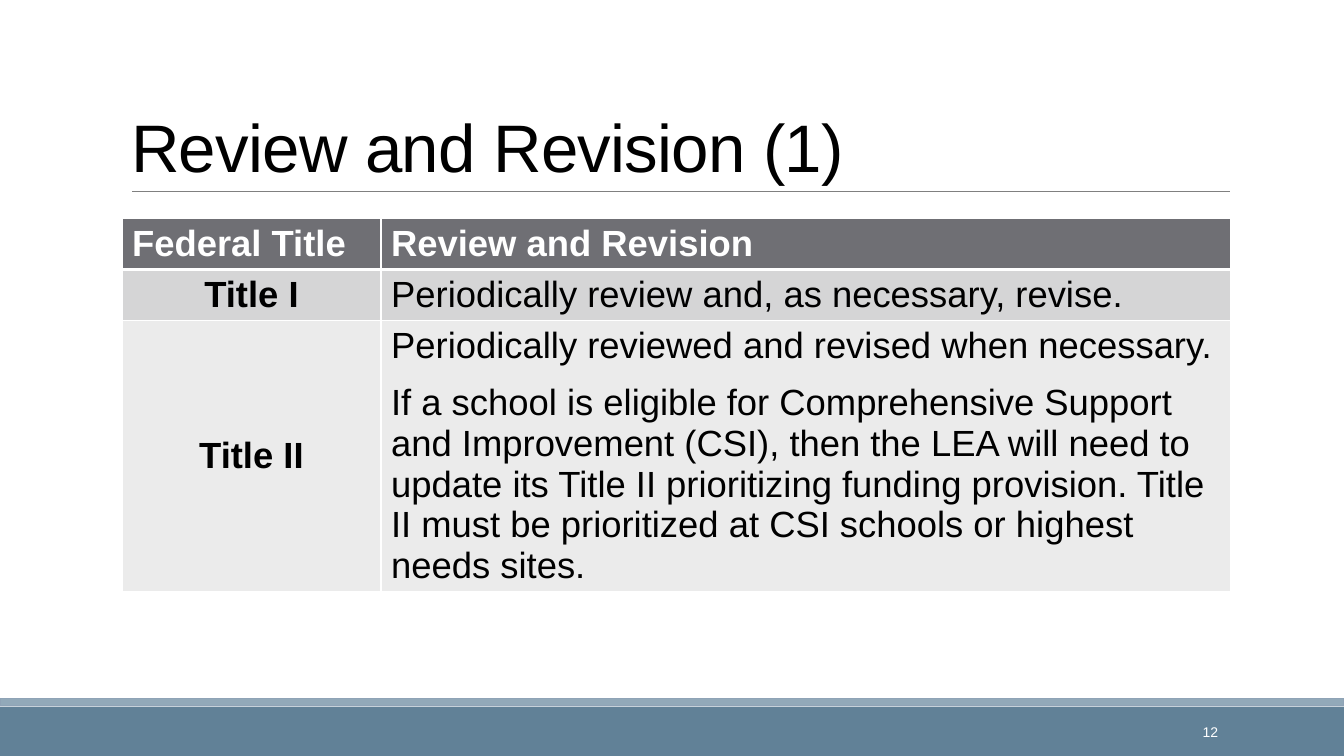
"""Build the Review and Revision slide with its table of federal titles."""
import pptx
import pptx.dml.color
import pptx.enum.shapes
import pptx.enum.text
import pptx.oxml
import pptx.oxml.ns
import pptx.util
from pptx.util import Inches, Pt

TITLE = "Review and Revision (1)"
PAGE_NUMBER = "12"
ROWS = [
    ("Federal Title", ["Review and Revision"]),
    ("Title I", ["Periodically review and, as necessary, revise."]),
    ("Title II", [
        "Periodically reviewed and revised when necessary.",
        "If a school is eligible for Comprehensive Support and Improvement (CSI), "
        "then the LEA will need to update its Title II prioritizing funding provision. "
        "Title II must be prioritized at CSI schools or highest needs sites.",
    ]),
]
COLUMN_WIDTHS = [2.57, 8.43]
ROW_HEIGHTS = [0.5, 0.5, 2.68]
ROW_FILLS = ["header", "band_dark", "band_light"]
COLORS = {
    "white": "FFFFFF", "black": "000000", "header": "6F6F74",
    "band_dark": "D5D5D6", "band_light": "EBEBEB", "footer": "618197",
    "stripe": "92A9B9", "stripe_edge": "8FA3B6", "rule": "808080",
}
FONT = "Arial"
ALIGN = pptx.enum.text.PP_ALIGN
ANCHOR = pptx.enum.text.MSO_ANCHOR


def color(name):
    return pptx.dml.color.RGBColor.from_string(COLORS[name])


def style_runs(para, size, color_name, bold=False):
    for span in para.runs:
        span.font.name = FONT
        span.font.size = Pt(size)
        span.font.bold = bold
        span.font.color.rgb = color(color_name)


def add_bar(page, top, height, fill, edge=None):
    bar = page.shapes.add_shape(pptx.enum.shapes.MSO_SHAPE.RECTANGLE,
                                0, Inches(top), Inches(13.33), Inches(height))
    bar.shadow.inherit = False
    bar.fill.solid()
    bar.fill.fore_color.rgb = color(fill)
    if edge:
        bar.line.color.rgb = color(edge)
        bar.line.width = Pt(1.25)
    else:
        bar.line.fill.background()


def add_rule(page):
    rule = page.shapes.add_connector(pptx.enum.shapes.MSO_CONNECTOR.STRAIGHT,
                                     Inches(1.31), Inches(1.9), Inches(12.2), Inches(1.9))
    rule.line.color.rgb = color("rule")
    rule.line.width = Pt(0.5)
    properties = rule._element.spPr
    properties.append(properties.makeelement(pptx.oxml.ns.qn("a:effectLst"), {}))


def add_title(page):
    title = page.shapes.title
    title.left, title.top = Inches(1.2), Inches(0.31)
    title.width, title.height = Inches(11), Inches(1.59)
    frame = title.text_frame
    frame.text = TITLE
    frame.word_wrap = True
    frame.vertical_anchor = ANCHOR.BOTTOM
    para = frame.paragraphs[0]
    para.alignment = ALIGN.LEFT
    para.line_spacing = 0.85
    style_runs(para, 48, "black")
    para.runs[0].font._element.set("spc", "-50")


def add_borders(cell, row):
    widths = {"L": 1, "R": 1, "T": 3 if row == 1 else 1, "B": 3 if row == 0 else 1}
    for side, width in widths.items():
        cell._tc.get_or_add_tcPr().append(pptx.oxml.parse_xml(
            f'<a:ln{side} {pptx.oxml.ns.nsdecls("a")} w="{Pt(width)}"><a:solidFill>'
            f'<a:srgbClr val="{COLORS["white"]}"/></a:solidFill></a:ln{side}>'))


def fill_cell(cell, lines, row, column):
    add_borders(cell, row)
    cell.fill.solid()
    cell.fill.fore_color.rgb = color(ROW_FILLS[row])
    cell.vertical_anchor = ANCHOR.MIDDLE if column == 0 else ANCHOR.TOP
    cell.text_frame.text = "\n".join(lines)
    for para in cell.text_frame.paragraphs:
        para.alignment = ALIGN.CENTER if column == 0 and row > 0 else ALIGN.LEFT
        para.space_after = Pt(12)
        style_runs(para, 26, "black" if row else "white", row == 0 or column == 0)


def add_review_table(page):
    table = page.shapes.add_table(
        len(ROWS), len(COLUMN_WIDTHS), Inches(1.21), Inches(2.17),
        Inches(sum(COLUMN_WIDTHS)), Inches(sum(ROW_HEIGHTS))).table
    for column, width in enumerate(COLUMN_WIDTHS):
        table.columns[column].width = Inches(width)
    for row, (name, lines) in enumerate(ROWS):
        table.rows[row].height = Inches(ROW_HEIGHTS[row])
        fill_cell(table.cell(row, 0), [name], row, 0)
        fill_cell(table.cell(row, 1), lines, row, 1)


def add_page_number(page):
    box = page.shapes.add_textbox(Inches(10.74), Inches(7.06), Inches(1.44), Inches(0.4))
    frame = box.text_frame
    frame.word_wrap = True
    frame.vertical_anchor = ANCHOR.MIDDLE
    frame.text = PAGE_NUMBER
    frame.paragraphs[0].alignment = ALIGN.RIGHT
    style_runs(frame.paragraphs[0], 10, "white")


def main():
    deck = pptx.Presentation()
    deck.slide_width, deck.slide_height = Inches(13.33), Inches(7.5)
    page = deck.slides.add_slide(deck.slide_layouts[5])
    add_bar(page, 7.01, 0.49, "footer")
    add_bar(page, 6.93, 0.07, "stripe", "stripe_edge")
    add_rule(page)
    add_title(page)
    add_review_table(page)
    add_page_number(page)
    deck.save("out.pptx")


if __name__ == "__main__":
    main()
